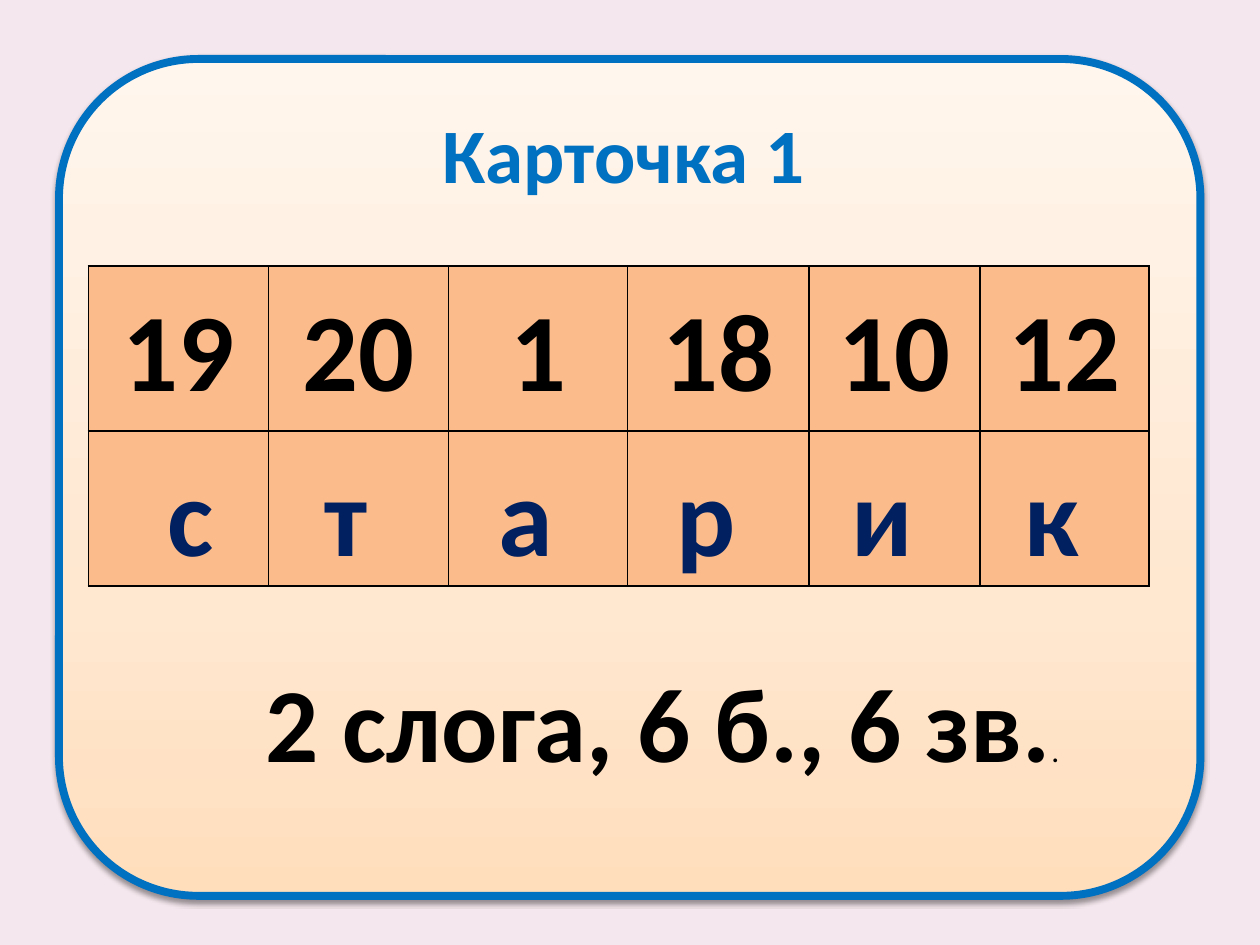
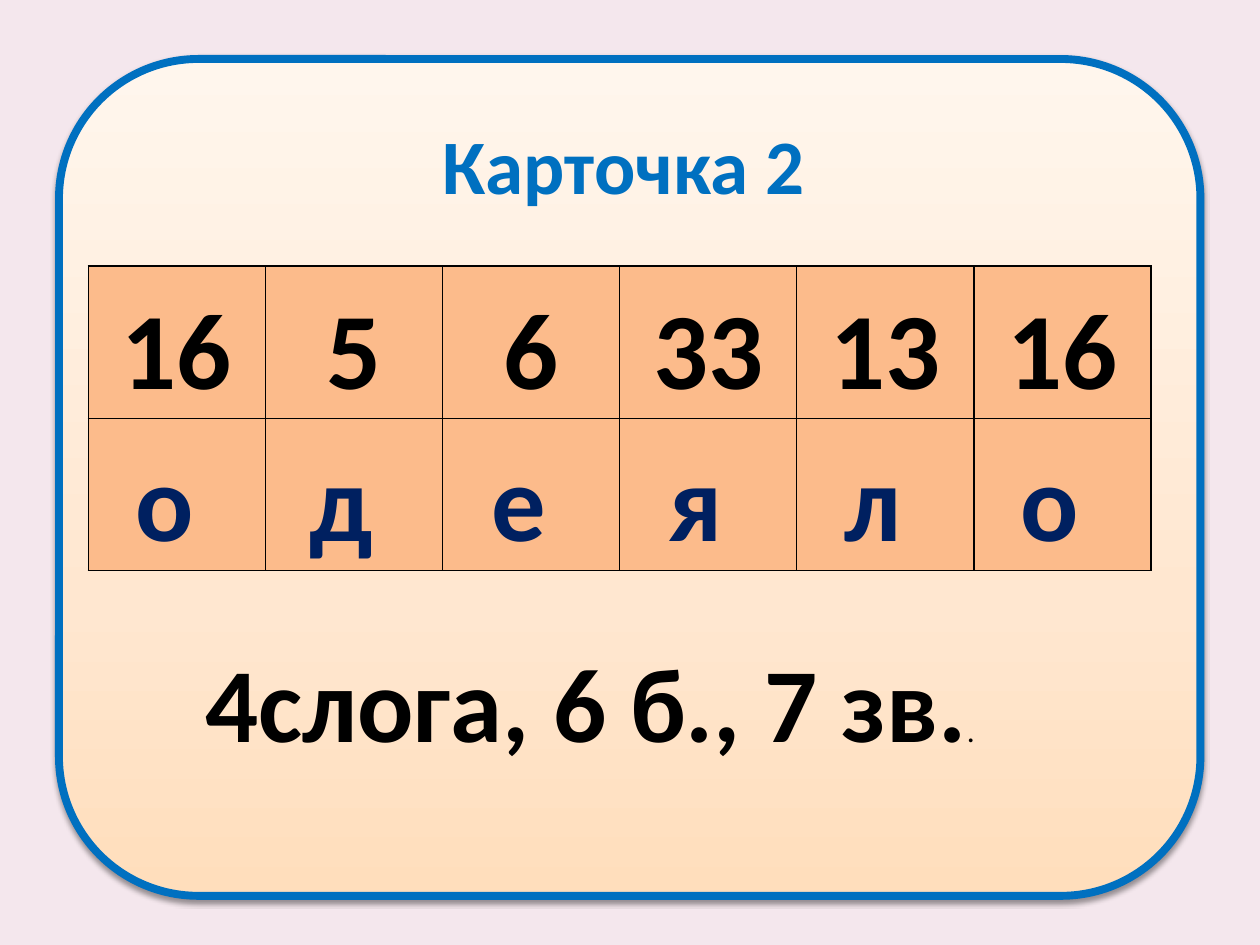
from copy import deepcopy
from dataclasses import dataclass

from pptx import Presentation
from pptx.dml.color import RGBColor
from pptx.enum.shapes import MSO_SHAPE
from pptx.enum.text import MSO_ANCHOR, MSO_AUTO_SIZE, PP_ALIGN
from pptx.oxml import parse_xml
from pptx.oxml.ns import nsdecls, qn
from pptx.util import Cm, Pt

FONT = "Calibri"
BLUE = RGBColor(0x00, 0x70, 0xC0)
NAVY = RGBColor(0x00, 0x20, 0x60)
BLACK = RGBColor(0x00, 0x00, 0x00)
PINK = RGBColor(0xF4, 0xE7, 0xED)
PEACH = RGBColor(0xFC, 0xBB, 0x8B)
CARD_STOPS = [
    (0, RGBColor(0xFF, 0xDE, 0xBC)),
    (0.35, RGBColor(0xFF, 0xE7, 0xD0)),
    (1, RGBColor(0xFF, 0xF6, 0xED)),
]
LETTER_SHIFT = 0.5


@dataclass
class Box:
    left: float
    top: float
    width: float
    height: float

    def lengths(self):
        return [Cm(side) for side in (self.left, self.top, self.width, self.height)]


@dataclass
class WordCard:
    heading: str
    heading_box: Box
    numbers: list
    letters: str
    right_shifted: set
    grid_box: Box
    columns: list
    rows: list
    grid_size: int
    grid_anchor: MSO_ANCHOR
    side_margin: float
    answer: str
    answer_box: Box


WORD_CARDS = [
    WordCard(
        "Карточка 1", Box(1.78, 2.03, 21.59, 4.09),
        [19, 20, 1, 18, 10, 12], "старик", {0},
        Box(1.78, 5.36, 21.41, 6.4),
        [3.63, 3.63, 3.61, 3.66, 3.45, 3.4], [3.33, 3.02],
        63, MSO_ANCHOR.TOP, 0.18,
        "2 слога, 6 б., 6 зв.", Box(5.11, 13.13, 16.66, 2.82),
    ),
    WordCard(
        "Карточка 2", Box(1.78, 2.24, 21.59, 4.09),
        [16, 5, 6, 33, 13, 16], "одеяло", set(),
        Box(1.78, 5.36, 21.44, 6.05),
        [3.57] * 6, [2.92] * 2,
        62, MSO_ANCHOR.MIDDLE, 0.15,
        "4слога, 6 б., 7 зв.", Box(3.89, 12.73, 16.18, 2.82),
    ),
]


def add_run(paragraph, text, size, color, bold=True):
    run = paragraph.add_run()
    run.text = text
    run.font.name = FONT
    run.font.size = Pt(size)
    run.font.bold = bold
    run.font.color.rgb = color


def add_backdrop(slide, layout, box):
    layout.slide_master.background.fill.solid()
    layout.slide_master.background.fill.fore_color.rgb = PINK
    card = slide.shapes.add_shape(MSO_SHAPE.ROUNDED_RECTANGLE, *box.lengths())
    card.fill.gradient()
    card.fill.gradient_angle = 90
    stop_list = card._element.spPr.find(".//" + qn("a:gsLst"))
    stop_list.append(deepcopy(stop_list[0]))
    for stop, (position, color) in zip(card.fill.gradient_stops, CARD_STOPS):
        stop.position = position
        stop.color.rgb = color
    card.line.color.rgb = BLUE
    card.line.width = Pt(4.5)
    card.shadow.inherit = False
    card._element.spPr.find(qn("a:effectLst")).append(parse_xml(
        f'<a:outerShdw {nsdecls("a")} blurRad="40000" dist="20000" dir="5400000" '
        'rotWithShape="0"><a:srgbClr val="000000"><a:alpha val="38000"/>'
        '</a:srgbClr></a:outerShdw>'))
    card._element.nvSpPr.cNvPr.set("id", "100")
    layout.shapes._spTree.insert(2, card._element)


def add_heading(slide, text, box):
    heading = slide.shapes.title
    heading.left, heading.top, heading.width, heading.height = box.lengths()
    frame = heading.text_frame
    frame.auto_size = MSO_AUTO_SIZE.NONE
    frame.vertical_anchor = MSO_ANCHOR.TOP
    frame.paragraphs[0].alignment = PP_ALIGN.CENTER
    add_run(frame.paragraphs[0], text, 44, BLUE)


def add_borders(cell):
    properties = cell._tc.get_or_add_tcPr()
    for side in "LRTB":
        properties.append(parse_xml(
            f'<a:ln{side} {nsdecls("a")} w="{Pt(1)}"><a:solidFill>'
            f'<a:srgbClr val="{BLACK}"/></a:solidFill></a:ln{side}>'))


def fill_cell(cell, text, color, word, left_shift=0, right_shift=0):
    add_borders(cell)
    cell.fill.solid()
    cell.fill.fore_color.rgb = PEACH
    cell.margin_left = Cm(word.side_margin + left_shift)
    cell.margin_right = Cm(word.side_margin + right_shift)
    cell.margin_top = cell.margin_bottom = 0
    cell.vertical_anchor = word.grid_anchor
    paragraph = cell.text_frame.paragraphs[0]
    paragraph.alignment = PP_ALIGN.CENTER
    paragraph.line_spacing = 1.15
    add_run(paragraph, text, word.grid_size, color)


def add_cipher_grid(slide, word, box):
    grid = slide.shapes.add_table(
        len(word.rows), len(word.columns), *box.lengths()).table
    grid.first_row = grid.horz_banding = False
    for column, width in zip(grid.columns, word.columns):
        column.width = Cm(width)
    for row, height in zip(grid.rows, word.rows):
        row.height = Cm(height)
    for index, (number, letter) in enumerate(zip(word.numbers, word.letters)):
        fill_cell(grid.cell(0, index), str(number), BLACK, word)
        shifts = (LETTER_SHIFT, 0) if index in word.right_shifted else (0, LETTER_SHIFT)
        fill_cell(grid.cell(1, index), letter, NAVY, word, *shifts)


def add_answer(slide, text, box):
    frame = slide.shapes.add_textbox(*box.lengths()).text_frame
    frame.word_wrap = False
    frame.auto_size = MSO_AUTO_SIZE.SHAPE_TO_FIT_TEXT
    add_run(frame.paragraphs[0], text, 60, BLACK)
    add_run(frame.paragraphs[0], ".", 18, BLACK, bold=False)


def add_word_slide(slide, word):
    add_heading(slide, word.heading, word.heading_box)
    add_cipher_grid(slide, word, word.grid_box)
    add_answer(slide, word.answer, word.answer_box)


def main():
    deck = Presentation()
    deck.slide_width, deck.slide_height = Cm(25.4), Cm(19.05)
    layout = deck.slide_layouts[5]
    slides = [deck.slides.add_slide(layout) for _ in WORD_CARDS]
    add_backdrop(slides[0], layout, Box(1.19, 1.19, 23.01, 16.87))
    for slide, word in zip(slides, WORD_CARDS):
        add_word_slide(slide, word)
    deck.save("out.pptx")


if __name__ == "__main__":
    main()
